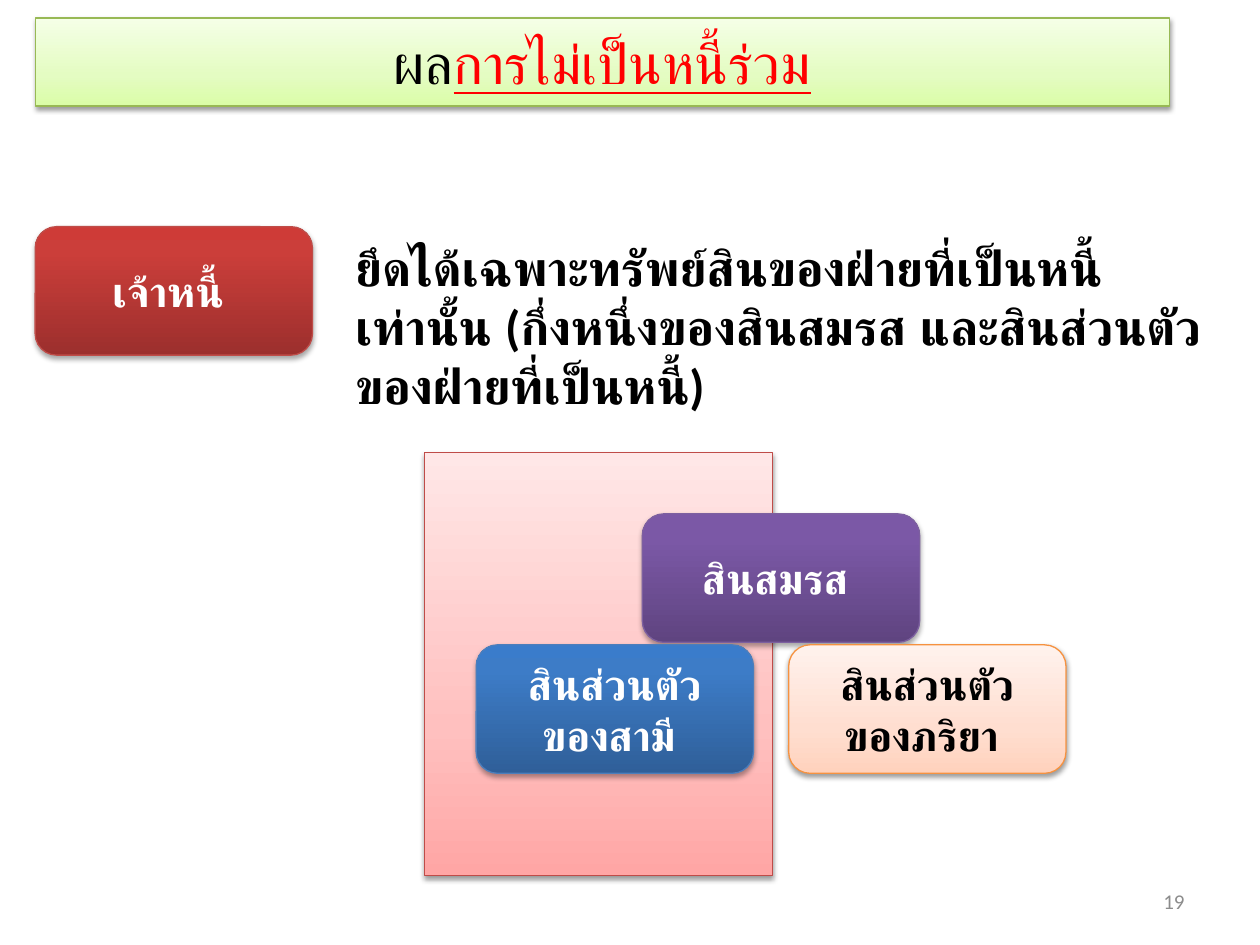
from dataclasses import dataclass
from lxml.etree import SubElement
from pptx import Presentation
from pptx.dml.color import RGBColor
from pptx.enum.lang import MSO_LANGUAGE_ID
from pptx.enum.shapes import MSO_SHAPE
from pptx.enum.text import MSO_ANCHOR, PP_ALIGN
from pptx.oxml.ns import qn
from pptx.util import Cm, Pt


@dataclass
class Look:
    stops: list[tuple[int, str]]
    line: str
    ink: str = "FFFFFF"
    alpha: int = 35
    drop: float = 1.8


@dataclass
class Card:
    text: str
    left: float
    top: float
    look: Look


CARD_W, CARD_H = 5.59, 2.59
ROW = 13.0
GREEN = Look([(0, "DAFDA7"), (35, "E4FCC2"), (100, "F5FFE7")], "98B955", "000000", 38, 1.6)
PINK = Look([(0, "FFA6A5"), (35, "FFC0BF"), (100, "FFE7E7")], "BF4C48", "000000", 38, 1.6)
PEACH = Look([(0, "FFD2BD"), (35, "FFDED0"), (100, "FFF2ED")], "F69240", "000000", 38, 1.6)
RED = Look([(0, "9C2F2D"), (80, "CB3E3A"), (100, "CE3B37")], "BF4C48")
PLUM = Look([(0, "5F4480"), (80, "7B58A6"), (100, "7C57A8")], "7D60A0")
BLUE = Look([(0, "2F5F99"), (80, "3D7CC7"), (100, "3A7CCB")], "4B7EBC")

CARDS = [
    Card("เจ้าหนี้ ", 0.71, 4.57, RED),
    Card("สินสมรส ", 12.95, 10.36, PLUM),
    Card("สินส่วนตัวของภริยา ", 15.9, ROW, PEACH),
    Card("สินส่วนตัวของสามี ", 9.6, ROW, BLUE),
]


def tint(color, code: str) -> None:
    color.rgb = RGBColor.from_string(code)


def place(shape, left: float, top: float, width: float, height: float) -> None:
    shape.left, shape.top = Cm(left), Cm(top)
    shape.width, shape.height = Cm(width), Cm(height)


def paint(shape, look: Look) -> None:
    shape.fill.gradient()
    shape.fill.gradient_angle = 90
    props = shape.element.spPr
    stops = props.find(".//" + qn("a:gsLst"))
    stops.clear()
    for pos, code in look.stops:
        stop = SubElement(stops, qn("a:gs"), pos=str(pos * 1000))
        SubElement(stop, qn("a:srgbClr"), val=code)
    tint(shape.line.color, look.line)
    shape.line.width = Pt(0.75)
    shape.shadow.inherit = False
    shade = SubElement(
        props.find(qn("a:effectLst")), qn("a:outerShdw"), blurRad=str(Pt(3.1)),
        dist=str(Pt(look.drop)), dir="5400000", rotWithShape="0")
    black = SubElement(shade, qn("a:srgbClr"), val="000000")
    SubElement(black, qn("a:alpha"), val=str(look.alpha * 1000))


def style(para, size: int, ink: str, align: PP_ALIGN, bold: bool = False) -> None:
    para.alignment = align
    font = para.font
    font.name, font.size, font.bold = "Calibri", Pt(size), bold
    font.language_id = MSO_LANGUAGE_ID.THAI
    tint(font.color, ink)


def write(shape, text: str, size: int, ink: str, align: PP_ALIGN,
          bold: bool = True, anchor: MSO_ANCHOR = MSO_ANCHOR.MIDDLE) -> None:
    frame = shape.text_frame
    frame.word_wrap = True
    frame.vertical_anchor = anchor
    frame.text = text
    style(frame.paragraphs[0], size, ink, align, bold)


def box(slide, left: float, top: float, width: float, height: float):
    return slide.shapes.add_textbox(Cm(left), Cm(top), Cm(width), Cm(height))


def block(slide, kind: MSO_SHAPE, left: float, top: float,
          width: float, height: float, look: Look):
    shape = slide.shapes.add_shape(kind, Cm(left), Cm(top), Cm(width), Cm(height))
    paint(shape, look)
    return shape


def head(slide) -> None:
    title = slide.shapes.title
    place(title, 0.71, 0.36, 22.86, 1.78)
    paint(title, GREEN)
    write(title, "ผล", 32, GREEN.ink, PP_ALIGN.CENTER, False)
    run = title.text_frame.paragraphs[0].add_run()
    run.text = "การไม่เป็นหนี้ร่วม"
    run.font.underline = True
    tint(run.font.color, "FF0000")


def main() -> None:
    deck = Presentation()
    deck.slide_width, deck.slide_height = Cm(25.4), Cm(19.05)
    slide = deck.slides.add_slide(deck.slide_layouts[5])
    block(slide, MSO_SHAPE.RECTANGLE, 8.56, 9.12, 7.01, 8.53, PINK)
    head(slide)
    write(box(slide, 18.21, 17.65, 5.92, 1.02), "19", 12, "8C8C8C", PP_ALIGN.RIGHT, False)
    for card in CARDS:
        shape = block(slide, MSO_SHAPE.ROUNDED_RECTANGLE,
                      card.left, card.top, CARD_W, CARD_H, card.look)
        write(shape, card.text, 24, card.look.ink, PP_ALIGN.CENTER)
    note = ("ยึดได้เฉพาะทรัพย์สินของฝ่ายที่เป็นหนี้เท่านั้น "
            "(กึ่งหนึ่งของสินสมรส และสินส่วนตัวของฝ่ายที่เป็นหนี้)")
    write(box(slide, 6.91, 4.67, 18.01, 3.84), note, 28, "000000",
          PP_ALIGN.LEFT, anchor=MSO_ANCHOR.TOP)
    deck.save("out.pptx")


if __name__ == "__main__":
    main()
